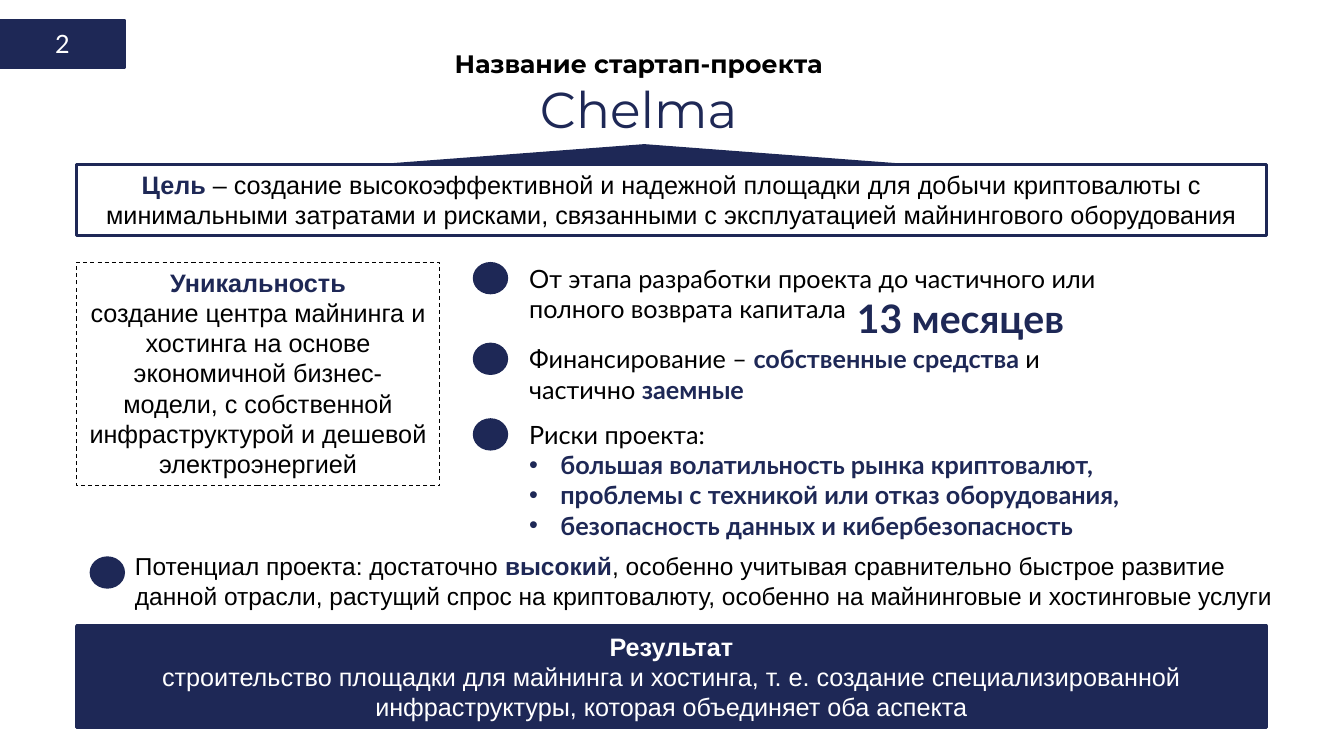
from lxml import etree
from pptx import Presentation
from pptx import util as u
from pptx.dml.color import RGBColor
from pptx.enum import dml, shapes, text
from pptx.oxml.ns import qn

NAVY = RGBColor(0x1E, 0x28, 0x56)
BLACK = RGBColor(0, 0, 0)
WHITE = RGBColor(255, 255, 255)

PX = 9144  # 100 px to the inch
LEFT, WIDTH = 76, 1180
BULLET_INDENT = 31
DOT_SIZE = (33, 30)


def px(*lengths):
    return [u.Emu(length * PX) for length in lengths]


def add_run(paragraph, words, font, size, color=BLACK, bold=False):
    run = paragraph.add_run()
    run.text = words
    run.font.name = font
    run.font.size = u.Pt(size)
    run.font.color.rgb = color
    run.font.bold = bold


def fill_text(shape, paragraphs, font, size=18, align=text.PP_ALIGN.LEFT,
              anchor=text.MSO_ANCHOR.TOP):
    """Each paragraph is a list of (words, color, bold) runs; None breaks the line."""
    frame = shape.text_frame
    frame.word_wrap = True
    frame.vertical_anchor = anchor
    for index, runs in enumerate(paragraphs):
        paragraph = frame.add_paragraph() if index else frame.paragraphs[0]
        paragraph.alignment = align
        for run in runs:
            if run is None:
                paragraph.add_line_break()
            else:
                add_run(paragraph, run[0], font, size, *run[1:])
    return frame


def add_textbox(slide, box, paragraphs, font, **style):
    return fill_text(slide.shapes.add_textbox(*px(*box)), paragraphs, font, **style)


def add_figure(slide, kind, box, fill=NAVY, line=NAVY, weight=1.5):
    shape = slide.shapes.add_shape(kind, *px(*box))
    shape.shadow.inherit = False
    if fill is None:
        shape.fill.background()
    else:
        shape.fill.solid()
        shape.fill.fore_color.rgb = fill
    shape.line.color.rgb = line
    shape.line.width = u.Pt(weight)
    return shape


def add_panel(slide, box, paragraphs, font="Arial", anchor=text.MSO_ANCHOR.TOP, **look):
    panel = add_figure(slide, shapes.MSO_SHAPE.RECTANGLE, box, **look)
    fill_text(panel, paragraphs, font, align=text.PP_ALIGN.CENTER, anchor=anchor)
    return panel


def add_dot(slide, left, top):
    add_figure(slide, shapes.MSO_SHAPE.OVAL, (left, top, *DOT_SIZE))


def add_bullet(paragraph):
    properties = paragraph._p.get_or_add_pPr()
    properties.set("marL", str(BULLET_INDENT * PX))
    properties.set("indent", str(-BULLET_INDENT * PX))
    etree.SubElement(properties, qn("a:buFont")).set("typeface", "Arial")
    etree.SubElement(properties, qn("a:buChar")).set("char", "•")


def add_header(slide, left, top, width, height):
    add_panel(slide, (0, 20, 124, 47), [[("2", WHITE)]], "Lato",
              anchor=text.MSO_ANCHOR.MIDDLE)
    frame = add_textbox(slide, (left, top, width, height),
                        [[("Название стартап-проекта", BLACK, True)], [("Chelma", NAVY)]],
                        "Montserrat", align=text.PP_ALIGN.CENTER)
    frame.paragraphs[1].runs[0].font.size = u.Pt(36)


def add_goal(slide, left, top, width, height):
    add_panel(slide, (left, top, width, height), [[
        ("Цель ", NAVY, True),
        ("– создание высокоэффективной и надежной площадки для добычи криптовалюты "
         "с минимальными затратами и рисками, связанными с эксплуатацией "
         "майнингового оборудования",)]], fill=None, weight=2.25)
    add_figure(slide, shapes.MSO_SHAPE.ISOSCELES_TRIANGLE, (left + 311, top - 19, 504, 19))


def add_uniqueness(slide, *box):
    panel = add_panel(slide, box, [
        [("Уникальность", NAVY, True)],
        [("создание центра майнинга и хостинга на основе экономичной бизнес-модели, "
          "с собственной инфраструктурой и дешевой электроэнергией",)],
    ], fill=None, line=BLACK, weight=0.75)
    panel.line.dash_style = dml.MSO_LINE.DASH


def add_key_points(slide, left, top, width):
    points = [
        (0, 71, [[("От этапа разработки проекта до частичного или полного возврата капитала",)]]),
        (80, 71, [[("Финансирование – ",), ("собственные средства ", NAVY, True),
                   ("и частично ",), ("заемные", NAVY, True)]]),
        (155, 131, [[("Риски проекта:",)],
                    [("большая волатильность рынка криптовалют,", NAVY, True)],
                    [("проблемы с техникой или отказ оборудования,", NAVY, True)],
                    [("безопасность данных и кибербезопасность", NAVY, True)]]),
    ]
    for offset, height, paragraphs in points:
        add_dot(slide, left, top + offset + 5)
        frame = add_textbox(slide, (left + 45, top + offset, width - 45, height),
                            paragraphs, "Lato")
        for paragraph in frame.paragraphs[1:]:
            add_bullet(paragraph)
    add_textbox(slide, (left + 370, top + 31, 230, 57),
                [[("13 месяцев", NAVY, True)]], "Lato", size=28)


def add_potential(slide, left, top, width, height):
    add_dot(slide, left, top + 11)
    add_textbox(slide, (left + 34, top, width - 34, height), [[
        ("Потенциал проекта: достаточно ",), ("высокий", NAVY, True),
        (", особенно учитывая сравнительно быстрое развитие ",), None,
        ("данной отрасли, растущий спрос на криптовалюту, особенно на майнинговые "
         "и хостинговые услуги",)]], "Arial", size=17.5)


def add_result(slide, *box):
    add_panel(slide, box, [
        [("Результат", WHITE, True)],
        [("строительство площадки для майнинга и хостинга, т. е. создание "
          "специализированной инфраструктуры, которая объединяет оба аспекта", WHITE)],
    ], weight=2.25)


def main():
    presentation = Presentation()
    presentation.slide_width, presentation.slide_height = px(1333, 750)
    slide = presentation.slides.add_slide(presentation.slide_layouts[6])
    add_header(slide, 300, 43, 667, 101)
    add_goal(slide, LEFT, 163, WIDTH, 71)
    add_uniqueness(slide, LEFT, 260, 360, 222)
    add_key_points(slide, 470, 256, 661)
    add_potential(slide, 90, 542, 1243, 71)
    add_result(slide, LEFT, 621, WIDTH, 101)
    presentation.save("out.pptx")


if __name__ == "__main__":
    main()
